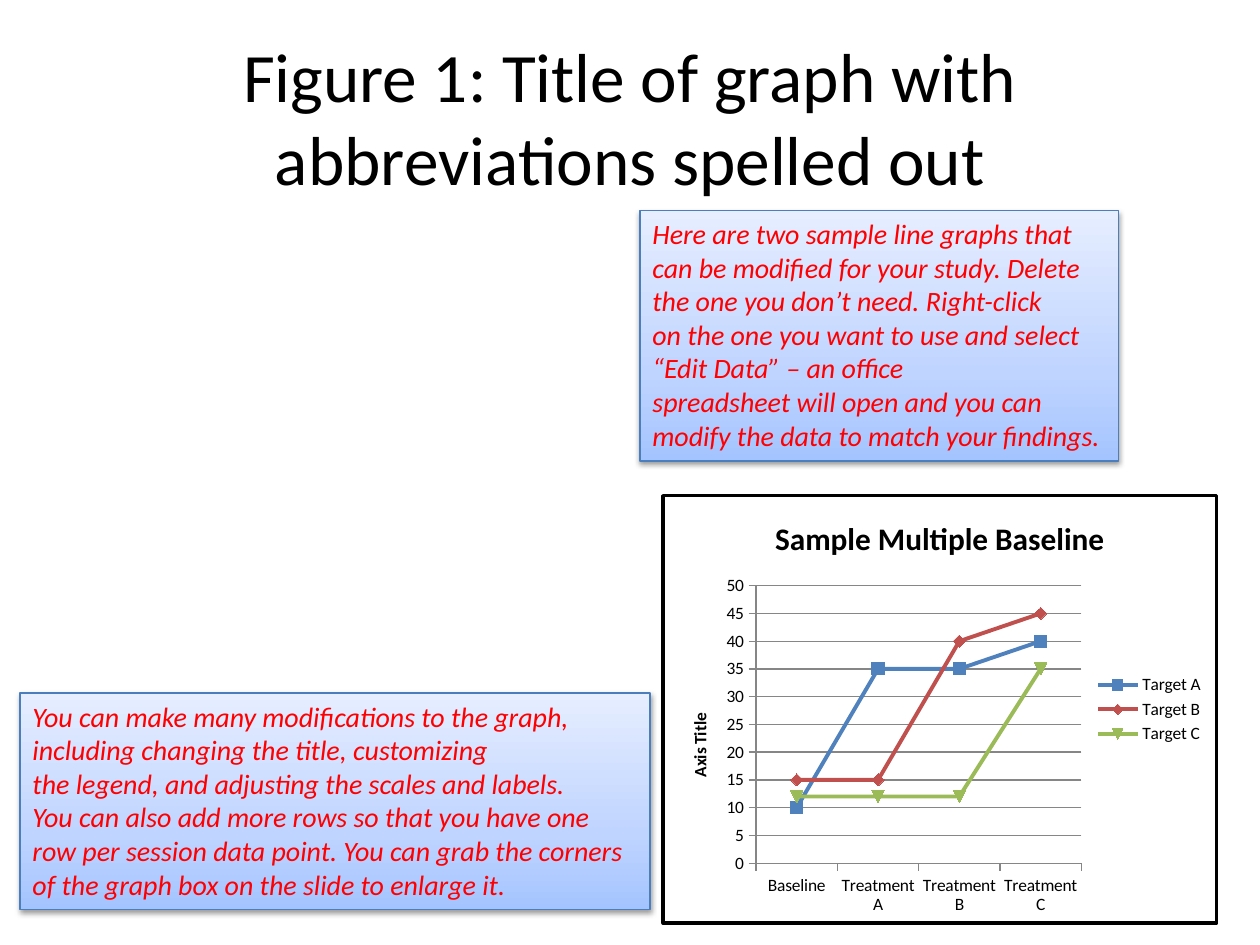
from copy import deepcopy
from dataclasses import dataclass

from pptx import Presentation
from pptx.chart.data import CategoryChartData
from pptx.dml.color import RGBColor
from pptx.enum.chart import XL_CHART_TYPE as ChartType
from pptx.enum.chart import XL_LEGEND_POSITION as LegendPosition
from pptx.enum.chart import XL_TICK_MARK as TickMark
from pptx.enum.shapes import MSO_SHAPE as ShapeType
from pptx.enum.text import MSO_ANCHOR as Anchor
from pptx.enum.text import MSO_AUTO_SIZE as AutoSize
from pptx.enum.text import PP_ALIGN as Align
from pptx.oxml import parse_xml
from pptx.oxml.ns import nsdecls, qn
from pptx.util import Inches, Pt


@dataclass(frozen=True)
class Theme:
    font: str = "Calibri"
    text: str = "000000"
    note_text: str = "FF0000"
    note_line: str = "4B7EBC"
    note_gradient: tuple = ((0, "A4C4FF"), (0.35, "BFD4FF"), (1, "E6EEFF"))
    paper: str = "FFFFFF"
    axis: str = "868686"
    series: tuple = ("4F81BD", "C0504D", "9BBB59")
    title_size: float = 39.6
    note_size: int = 16
    chart_title_size: int = 18
    chart_size: int = 10


def color(value):
    return RGBColor.from_string(value)


class SlideBuilder:
    def __init__(self, slide, theme):
        self.slide = slide
        self.theme = theme

    def style(self, font, size, value, bold=False, italic=False):
        font.name = self.theme.font
        font.size = Pt(size)
        font.color.rgb = color(value)
        font.bold = bold
        font.italic = italic

    def title(self, text, *box):
        frame = self.slide.shapes.add_textbox(*map(Inches, box)).text_frame
        frame.word_wrap = True
        frame.vertical_anchor = Anchor.MIDDLE
        frame.text = text
        paragraph = frame.paragraphs[0]
        paragraph.alignment = Align.CENTER
        self.style(paragraph.font, self.theme.title_size, self.theme.text)

    def note(self, lines, *box):
        shape = self.slide.shapes.add_shape(ShapeType.RECTANGLE, *map(Inches, box))
        shape.line.color.rgb = color(self.theme.note_line)
        shape.line.width = Pt(0.75)
        self.gradient(shape)
        self.shadow(shape)
        frame = shape.text_frame
        frame.word_wrap = False
        frame.auto_size = AutoSize.SHAPE_TO_FIT_TEXT
        frame.vertical_anchor = Anchor.TOP
        frame.text = "\n".join(lines)
        for paragraph in frame.paragraphs:
            paragraph.alignment = Align.LEFT
            self.style(paragraph.font, self.theme.note_size,
                       self.theme.note_text, italic=True)

    def gradient(self, shape):
        fill = shape.fill
        fill.gradient()
        fill.gradient_angle = 90
        # A new gradient has two stops; add the middle one
        first = shape._element.spPr.find(".//" + qn("a:gs"))
        first.addnext(deepcopy(first))
        for stop, (position, value) in zip(fill.gradient_stops, self.theme.note_gradient):
            stop.position = position
            stop.color.rgb = color(value)

    def shadow(self, shape):
        shape.shadow.inherit = False
        shape._element.spPr.find(qn("a:effectLst")).append(parse_xml(
            f'<a:outerShdw {nsdecls("a")} blurRad="{Pt(3.1)}" dist="{Pt(1.6)}" '
            'dir="5400000" rotWithShape="0"><a:srgbClr val="000000">'
            '<a:alpha val="38000"/></a:srgbClr></a:outerShdw>'))

    def line_chart(self, title, axis_title, categories, series, *box):
        theme = self.theme
        data = CategoryChartData()
        data.categories = categories
        for name, values in series.items():
            data.add_series(name, values)
        chart = self.slide.shapes.add_chart(
            ChartType.LINE_MARKERS, *map(Inches, box), data).chart
        self.style(chart.font, theme.chart_size, theme.text)
        self.chart_frame(chart)

        # Titles and legend
        chart.has_title = True
        self.chart_text(chart.chart_title, title, theme.chart_title_size)
        chart.value_axis.has_title = True
        self.chart_text(chart.value_axis.axis_title, axis_title, theme.chart_size)
        chart.has_legend = True
        chart.legend.position = LegendPosition.RIGHT
        chart.legend.include_in_layout = False

        # Axes
        chart.value_axis.minimum_scale = 0
        chart.value_axis.maximum_scale = 50
        chart.value_axis.major_unit = 5
        for axis in (chart.value_axis, chart.category_axis):
            axis.major_tick_mark = TickMark.OUTSIDE
            axis.format.line.color.rgb = color(theme.axis)
        chart.value_axis.major_gridlines.format.line.color.rgb = color(theme.axis)

        # Series
        chart.plots[0].vary_by_categories = False
        for line, value in zip(chart.plots[0].series, theme.series):
            line.smooth = False
            line.format.line.color.rgb = color(value)
            line.format.line.width = Pt(2.25)
            line.marker.size = 7
            line.marker.format.fill.solid()
            line.marker.format.fill.fore_color.rgb = color(value)
            line.marker.format.line.color.rgb = color(value)

    def chart_text(self, target, text, size):
        target.text_frame.text = text
        self.style(target.text_frame.paragraphs[0].font, size, self.theme.text, bold=True)

    def chart_frame(self, chart):
        chart._chartSpace.find(qn("c:txPr")).addprevious(parse_xml(
            f'<c:spPr {nsdecls("c", "a")}>'
            f'<a:solidFill><a:srgbClr val="{self.theme.paper}"/></a:solidFill>'
            f'<a:ln w="{Pt(2)}"><a:solidFill><a:srgbClr val="{self.theme.text}"/>'
            '</a:solidFill></a:ln></c:spPr>'))


def main():
    presentation = Presentation()
    presentation.slide_width = Inches(10)
    presentation.slide_height = Inches(7.5)
    slide = presentation.slides.add_slide(presentation.slide_layouts[6])
    builder = SlideBuilder(slide, Theme())

    builder.title("Figure 1: Title of graph with abbreviations spelled out",
                  0.5, 0.3, 9, 1.25)

    # Sample graph
    builder.line_chart(
        "Sample Multiple Baseline", "Axis Title",
        ["Baseline", "Treatment A", "Treatment B", "Treatment C"],
        {"Target A": (10, 35, 35, 40),
         "Target B": (15, 15, 40, 45),
         "Target C": (12, 12, 12, 35)},
        5.25, 3.92, 4.42, 3.42)

    # Instructions
    builder.note(["Here are two sample line graphs that",
                  "can be modified for your study. Delete",
                  "the one you don’t need. Right-click",
                  "on the one you want to use and select",
                  "“Edit Data” – an office",
                  "spreadsheet will open and you can",
                  "modify the data to match your findings."],
                 5.08, 1.67, 3.8, 1.99)
    builder.note(["You can make many modifications to the graph,",
                  "including changing the title, customizing",
                  "the legend, and adjusting the scales and labels.",
                  "You can also add more rows so that you have one",
                  "row per session data point. You can grab the corners",
                  "of the graph box on the slide to enlarge it."],
                 0.16, 5.5, 5, 1.72)

    presentation.save("out.pptx")


if __name__ == "__main__":
    main()
